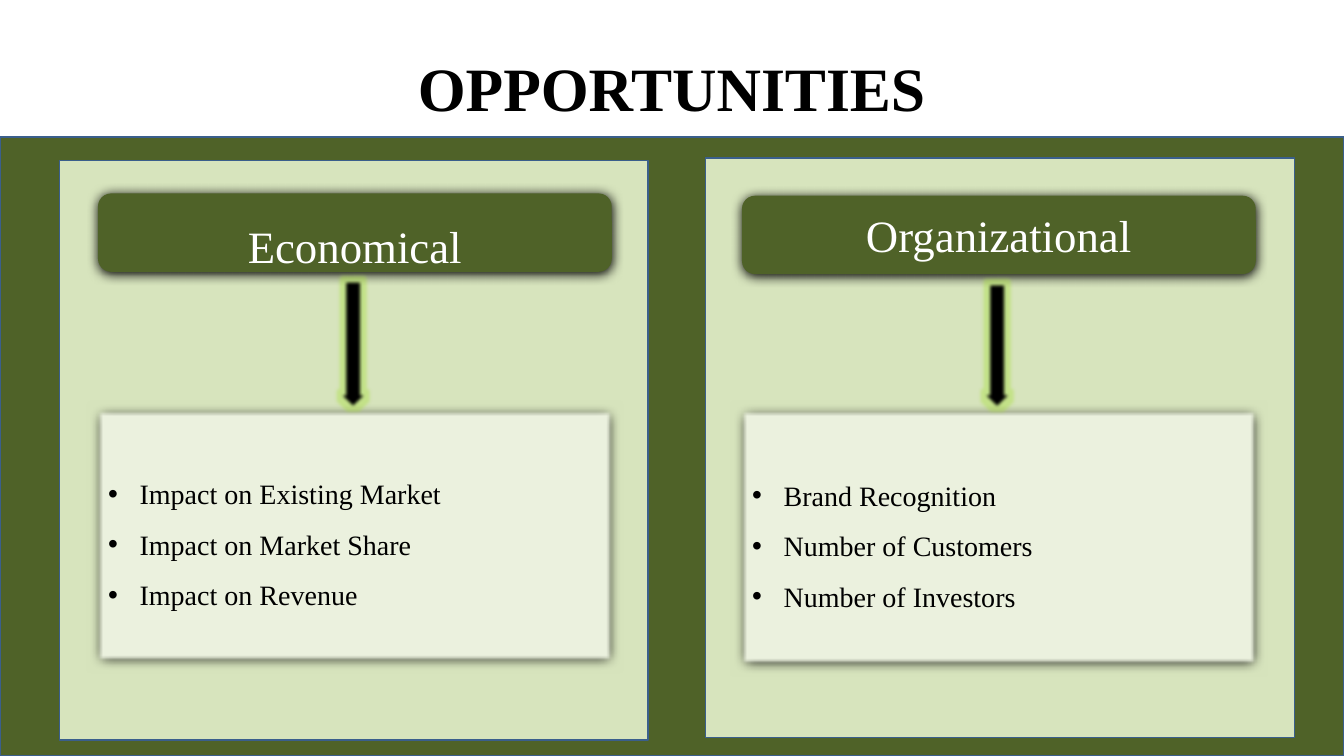
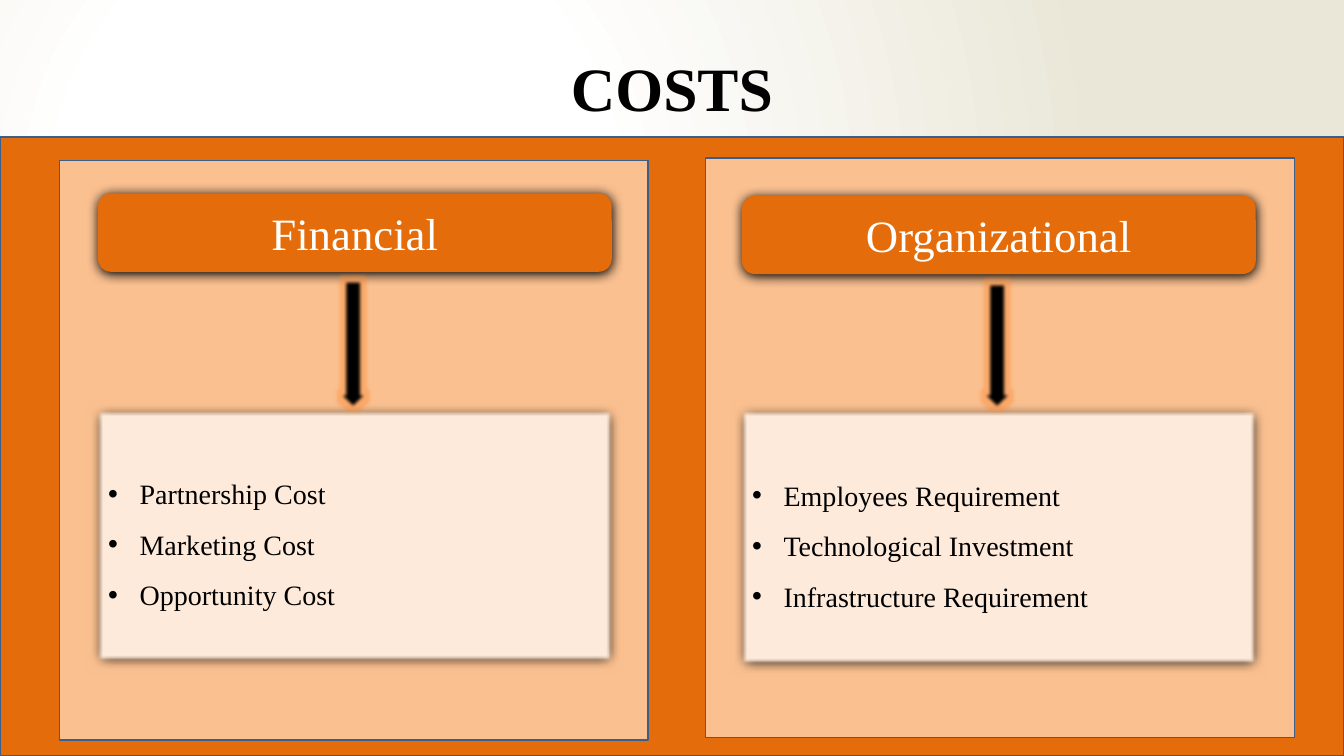
from dataclasses import dataclass

from lxml import etree
from pptx import Presentation
from pptx.dml.color import RGBColor
from pptx.enum.shapes import MSO_SHAPE
from pptx.enum.text import MSO_ANCHOR, MSO_AUTO_SIZE, PP_ALIGN
from pptx.oxml import parse_xml
from pptx.oxml.ns import nsdecls, qn
from pptx.util import Pt

RECT = MSO_SHAPE.RECTANGLE
ROUNDED = MSO_SHAPE.ROUNDED_RECTANGLE
DOWN_ARROW = MSO_SHAPE.DOWN_ARROW
MIDDLE = MSO_ANCHOR.MIDDLE
LEFT, CENTER = PP_ALIGN.LEFT, PP_ALIGN.CENTER
NO_AUTOFIT = MSO_AUTO_SIZE.NONE

# Shared style
FONT = "Times New Roman"
BLACK, WHITE, OUTLINE = "000000", "FFFFFF", "3A5F8C"
SLIDE_W, SLIDE_H = 960, 540
TWO_CONTENT = 3
SOFT_EDGE = 2.5

# Shared geometry in points
BAND_TOP = 98
PANEL_W, PANEL_H = 420.5, 414
HEADING_W, HEADING_H = 367, 56
ARROW_W, ARROW_TOP = 26.6, 200
LIST_TOP, LIST_H = 293.4, 178.4


@dataclass
class Column:
    panel_left: float
    panel_top: float
    left: float
    heading_top: float
    drop: float  # how far the arrow top and list bottom sit lower


COLUMNS = (Column(42.5, 114.5, 70, 138.2, 0), Column(504, 113, 530, 139.8, 2))


@dataclass
class Theme:
    dark: str
    panel: str
    pale: str
    glow: str


GREEN = Theme("4F6228", "D7E4BD", "EBF1DE", "A8E03A")
ORANGE = Theme("E46C0A", "FAC090", "FDEADA", "FF8A30")


def rgb(hex_color):
    return RGBColor.from_string(hex_color)


def style(shape, fill, line=None):
    shape.fill.solid()
    shape.fill.fore_color.rgb = rgb(fill)
    if line:
        shape.line.color.rgb = rgb(line)
        shape.line.width = Pt(1)
    else:
        shape.line.fill.background()
    shape.shadow.inherit = False


def place(shape, left, top, width, height):
    shape.left, shape.top = Pt(left), Pt(top)
    shape.width, shape.height = Pt(width), Pt(height)


def add_block(slide, kind, box, fill, line=None):
    block = slide.shapes.add_shape(kind, *(Pt(length) for length in box))
    style(block, fill, line)
    return block


def add_effect(shape, tag, color=None, alpha=100, **lengths):
    """Append one effect; lengths are in points."""
    effects = shape.element.spPr.find(qn("a:effectLst"))
    effect = etree.SubElement(effects, qn(f"a:{tag}"))
    for name, length in lengths.items():
        effect.set(name, str(int(Pt(length))))
    if color:
        tint = etree.SubElement(effect, qn("a:srgbClr"), val=color)
        etree.SubElement(tint, qn("a:alpha"), val=str(alpha * 1000))
    return effect


def add_shadow(shape):
    shadow = add_effect(shape, "outerShdw", BLACK, blurRad=8.5, dist=1)
    shadow.set("dir", "5400000")
    shadow.set("algn", "t")
    shadow.set("rotWithShape", "0")


def write(paragraph, text, size, color, align=CENTER, spacing=1.0, bold=False):
    paragraph.alignment = align
    paragraph.line_spacing = spacing
    paragraph.space_before = Pt(0)
    run = paragraph.add_run()
    run.text = text
    run.font.name = FONT
    run.font.size = Pt(size)
    run.font.bold = bold
    run.font.color.rgb = rgb(color)


def add_title(slide, text):
    title = slide.shapes.title
    place(title, 66, 13, 828, 104.4)
    title.text_frame.vertical_anchor = MIDDLE
    write(title.text_frame.paragraphs[0], text, 44, BLACK, spacing=0.9, bold=True)


def add_heading(slide, column, theme, text, spacing):
    box = (column.left, column.heading_top, HEADING_W, HEADING_H)
    heading = add_block(slide, ROUNDED, box, theme.dark)
    add_shadow(heading)
    heading.text_frame.vertical_anchor = MIDDLE
    write(heading.text_frame.paragraphs[0], text, 32, WHITE, spacing=spacing)


def fill_list(body, column, theme, items):
    place(body, column.left, LIST_TOP, HEADING_W, LIST_H + column.drop)
    style(body, theme.pale)
    add_shadow(body)
    add_effect(body, "softEdge", rad=SOFT_EDGE)
    body.element.getparent().append(body.element)  # bring in front of the panel
    frame = body.text_frame
    frame.auto_size = NO_AUTOFIT
    frame.vertical_anchor = MIDDLE
    for index, item in enumerate(items):
        paragraph = frame.add_paragraph() if index else frame.paragraphs[0]
        write(paragraph, item, 20, BLACK, align=LEFT, spacing=1.5)
        properties = paragraph._p.get_or_add_pPr()
        properties.set("marL", str(int(Pt(22.5))))
        properties.set("indent", str(int(Pt(-22.5))))


def add_arrow(slide, column, theme):
    top = ARROW_TOP + column.drop
    left = column.left + 169
    arrow = add_block(slide, DOWN_ARROW, (left, top, ARROW_W, LIST_TOP - top),
                      BLACK, OUTLINE)
    add_effect(arrow, "glow", theme.glow, alpha=40, rad=5)
    add_effect(arrow, "softEdge", rad=SOFT_EDGE)


def set_radial_background(slide, inner, outer):
    fill = slide.background.fill
    fill.gradient()
    for stop, color, position in zip(fill.gradient_stops, (inner, outer), (0.34, 1)):
        stop.color.rgb = rgb(color)
        stop.position = position
    linear = next(slide.element.iter(qn("a:lin")))
    linear.getparent().replace(linear, parse_xml(
        f'<a:path {nsdecls("a")} path="circle">'
        '<a:fillToRect l="50000" t="50000" r="100000" b="100000"/></a:path>'))


def add_comparison(deck, title, theme, topics):
    """Title above a band with one panel per (heading, spacing, items) topic."""
    slide = deck.slides.add_slide(deck.slide_layouts[TWO_CONTENT])
    bodies = [holder for holder in slide.placeholders
              if holder.placeholder_format.idx in (1, 2)]
    add_title(slide, title)
    add_block(slide, RECT, (0, BAND_TOP, SLIDE_W, SLIDE_H - BAND_TOP),
              theme.dark, OUTLINE)
    for column, body, (heading, spacing, items) in zip(COLUMNS, bodies, topics):
        panel = (column.panel_left, column.panel_top, PANEL_W, PANEL_H)
        add_block(slide, RECT, panel, theme.panel, OUTLINE)
        add_heading(slide, column, theme, heading, spacing)
        fill_list(body, column, theme, items)
        add_arrow(slide, column, theme)
    return slide


def main():
    deck = Presentation()
    deck.slide_width, deck.slide_height = Pt(SLIDE_W), Pt(SLIDE_H)

    # Opportunities
    add_comparison(deck, "OPPORTUNITIES", GREEN, (
        ("Economical", 1.5, ("Impact on Existing Market",
                             "Impact on Market Share",
                             "Impact on Revenue")),
        ("Organizational", 1.0, ("Brand Recognition",
                                 "Number of Customers",
                                 "Number of Investors")),
    ))

    # Costs
    costs = add_comparison(deck, "COSTS", ORANGE, (
        ("Financial", 1.0, ("Partnership Cost",
                            "Marketing Cost",
                            "Opportunity Cost")),
        ("Organizational", 1.0, ("Employees Requirement",
                                 "Technological Investment",
                                 "Infrastructure Requirement")),
    ))
    set_radial_background(costs, WHITE, "EAE7D8")

    deck.save("out.pptx")


if __name__ == "__main__":
    main()
